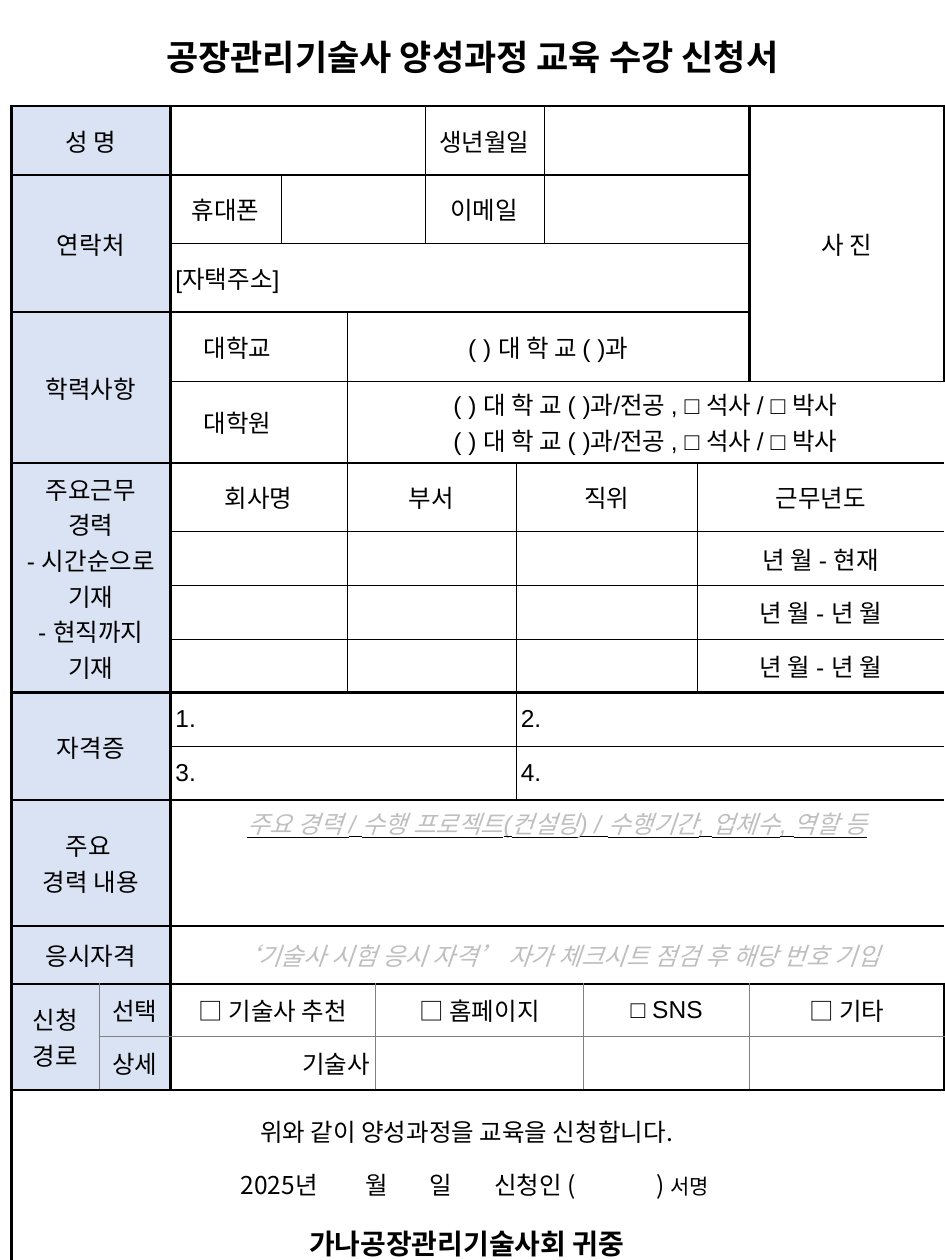
from lxml.etree import SubElement
from pptx import Presentation
from pptx.dml.color import RGBColor
from pptx.enum.text import MSO_ANCHOR, MSO_AUTO_SIZE, PP_ALIGN
from pptx.oxml.ns import qn
from pptx.util import Pt

BLACK = RGBColor(0, 0, 0)
GREY = RGBColor(0x80, 0x80, 0x80)
PALE = RGBColor(0xBF, 0xBF, 0xBF)
BLUE = RGBColor(0xDA, 0xE3, 0xF3)
LEFT, MID, RIGHT = PP_ALIGN.LEFT, PP_ALIGN.CENTER, PP_ALIGN.RIGHT

COLS = [50.3, 40.6, 63.1, 37.7, 16.3, 28.3, 52, 16, 22.9, 65.1, 29.7, 111.1]
ROWS = [39.3] * 6 + [30.7] * 5 + [72, 33, 30.3, 30.3, 100]
BANDS = {0, 1, 3, 5, 9, 11, 12, 13, 15, 16}
DEGREE = "( ) 대 학 교 ( )과/전공 , □ 석사 / □ 박사"

HEADS = [
    (0, 0, 1, 2, "성 명"), (1, 0, 2, 2, "연락처"), (3, 0, 2, 2, "학력사항"),
    (5, 0, 4, 2, "주요근무\n경력\n- 시간순으로 기재\n- 현직까지 기재"),
    (9, 0, 2, 2, "자격증"), (11, 0, 1, 2, "주요 \n경력 내용"),
    (12, 0, 1, 2, "응시자격"), (13, 0, 2, 1, "신청\n경로"),
    (13, 1, 1, 1, "선택"), (14, 1, 1, 1, "상세"),
]
FIELDS = [
    (0, 2, 1, 4, ""), (0, 6, 1, 2, "생년월일"), (0, 8, 1, 3, ""),
    (0, 11, 4, 1, "사 진"),
    (1, 2, 1, 1, "휴대폰"), (1, 3, 1, 3, ""), (1, 6, 1, 2, "이메일"),
    (1, 8, 1, 3, ""),
    (4, 4, 1, 8, f"{DEGREE}\n{DEGREE}"),
    (13, 2, 1, 3, "□ 기술사 추천"), (13, 5, 1, 4, "□ 홈페이지"),
    (13, 9, 1, 2, "□ SNS"), (13, 11, 1, 1, "□ 기타"),
    (14, 5, 1, 4, ""), (14, 9, 1, 2, ""), (14, 11, 1, 1, ""),
]
JOBS = [
    ("회사명", "부서", "직위", "근무년도"),
    ("", "", "", "년 월 - 현재"),
    ("", "", "", "년 월 - 년 월"),
    ("", "", "", "년 월 - 년 월"),
]
JOB_COLS = [(2, 2), (4, 3), (7, 3), (10, 2)]


def level(row, col):
    if row in (0, 1, 16):
        return 1.7, BLACK
    if row in BANDS or (row, col) == (4, 11):
        return 1.5, BLACK
    return (0.5, GREY) if row == 14 else (0.28, BLACK)


def upright(row, col):
    if col in (0, 12):
        return 1.7, BLACK
    if col == 2 or (col == 11 and row < 4):
        return 1.5, BLACK
    return (0.5, GREY) if row > 12 else (0.28, BLACK)


class Form:
    def __init__(self, slide):
        self.slide = slide
        self.font = "Arial"
        self.size = 14

    def run(self, para, text, size=None, color=BLACK, bold=False,
            slant=False, under=False, font=None):
        run = para.add_run()
        run.text = text
        face = run.font
        face.size = Pt(size or self.size)
        face.bold, face.italic, face.underline = bold, slant, under
        face.color.rgb = color
        if under:
            fill = SubElement(SubElement(run._r.get_or_add_rPr(), qn("a:uFill")),
                              qn("a:solidFill"))
            SubElement(fill, qn("a:srgbClr"), val=str(BLACK))
        face.name = font or self.font

    def indent(self, para, left=0, right=0):
        props = para._p.get_or_add_pPr()
        props.set("marL", str(Pt(left)))
        props.set("marR", str(Pt(right)))

    def tabs(self, para, stops):
        tray = SubElement(para._p.get_or_add_pPr(), qn("a:tabLst"))
        for stop in stops:
            SubElement(tray, qn("a:tab"), pos=str(Pt(stop)), algn="l")

    def title(self, text, left, top, width, height):
        box = self.slide.shapes.add_textbox(Pt(left), Pt(top), Pt(width), Pt(height))
        frame = box.text_frame
        frame.word_wrap = False
        frame.auto_size = MSO_AUTO_SIZE.SHAPE_TO_FIT_TEXT
        para = frame.paragraphs[0]
        para.alignment = MID
        self.run(para, text, 20, bold=True)

    def table(self, left, top):
        frame = self.slide.shapes.add_table(
            len(ROWS), len(COLS), Pt(left), Pt(top), Pt(sum(COLS)), Pt(sum(ROWS)))
        self.grid = frame.table
        self.grid.first_row = self.grid.horz_banding = False
        for col, width in zip(self.grid.columns, COLS):
            col.width = Pt(width)
        for row, height in zip(self.grid.rows, ROWS):
            row.height = Pt(height)

    def edge(self, cell, side, rule):
        props = cell._tc.get_or_add_tcPr()
        if rule is None:
            SubElement(SubElement(props, qn(f"a:ln{side}"), w="0"), qn("a:noFill"))
            return
        width, color = rule
        line = SubElement(props, qn(f"a:ln{side}"), w=str(Pt(width)))
        fill = SubElement(line, qn("a:solidFill"))
        SubElement(fill, qn("a:srgbClr"), val=str(color))

    def cell(self, row, col, high, wide, text="", align=MID, fill=None,
             left=0, right=0, anchor=MSO_ANCHOR.MIDDLE, **look):
        last, end = row + high, col + wide
        for y in range(row, last):
            for x in range(col, end):
                part = self.grid.cell(y, x)
                self.edge(part, "L", upright(y, x) if x == col else None)
                self.edge(part, "R", upright(y, x + 1) if x + 1 == end else None)
                self.edge(part, "T", level(y, x) if y == row else None)
                self.edge(part, "B", level(y + 1, x) if y + 1 == last else None)
                if fill:
                    part.fill.solid()
                    part.fill.fore_color.rgb = fill
                else:
                    part.fill.background()
        cell = self.grid.cell(row, col)
        if high * wide > 1:
            cell.merge(self.grid.cell(last - 1, end - 1))
        cell.margin_left = cell.margin_right = Pt(2.9)
        cell.margin_top = cell.margin_bottom = Pt(2.9)
        cell.vertical_anchor = anchor
        frame = cell.text_frame
        for i, line in enumerate(text.split("\n")):
            para = frame.add_paragraph() if i else frame.paragraphs[0]
            para.alignment = align
            if left or right:
                self.indent(para, left, right)
            if line:
                self.run(para, line, **look)
        return frame

    def pledge(self):
        font = "Noto Sans CJK KR"
        frame = self.cell(15, 0, 1, 12, "위와 같이 양성과정을 교육을 신청합니다.",
                          right=12.6, font=font)
        sign, name = frame.add_paragraph(), frame.add_paragraph()
        for para in frame.paragraphs:
            para.line_spacing = 1.5
        sign.alignment, name.alignment = LEFT, MID
        self.tabs(sign, [128, 199.4, 236, 273, 365.7])
        self.run(sign, "\t2025년\t월\t일\t신청인 (\t) ", font=font)
        self.run(sign, "서명", 12, font=font)
        self.run(name, "가나공장관리기술사회 귀중", 16, bold=True, font=font)


def main():
    deck = Presentation()
    deck.slide_width, deck.slide_height = Pt(540), Pt(720)
    form = Form(deck.slides.add_slide(deck.slide_layouts[6]))
    form.table(6.5, 60.6)
    for head in HEADS:
        form.cell(*head, fill=BLUE)
    for field in FIELDS:
        form.cell(*field)
    form.cell(2, 2, 1, 9, "[자택주소]", LEFT)
    form.cell(3, 2, 1, 2, "대학교", right=24)
    form.cell(3, 4, 1, 7, "( ) 대 학 교 ( )과", left=24, right=24)
    form.cell(4, 2, 1, 2, "대학원", right=24)
    for row, job in enumerate(JOBS, 5):
        for (col, wide), text in zip(JOB_COLS, job):
            form.cell(row, col, 1, wide, text)
    for i in range(4):
        form.cell(9 + i // 2, 2 + i % 2 * 5, 1, 5, f"{i + 1}.", LEFT)
    form.cell(11, 2, 1, 10, "주요 경력 / 수행 프로젝트(컨설팅) / 수행기간, 업체수, 역할 등",
              anchor=MSO_ANCHOR.TOP, color=PALE, slant=True, under=True)
    form.cell(12, 2, 1, 10, "‘기술사 시험 응시 자격’ 자가 체크시트 점검 후 해당 번호 기입",
              color=PALE, slant=True)
    form.cell(14, 2, 1, 3, "기술사", RIGHT, left=40)
    form.pledge()
    form.title("공장관리기술사 양성과정 교육 수강 신청서", 67, 16.6, 406, 31.7)
    deck.save("out.pptx")


if __name__ == "__main__":
    main()
